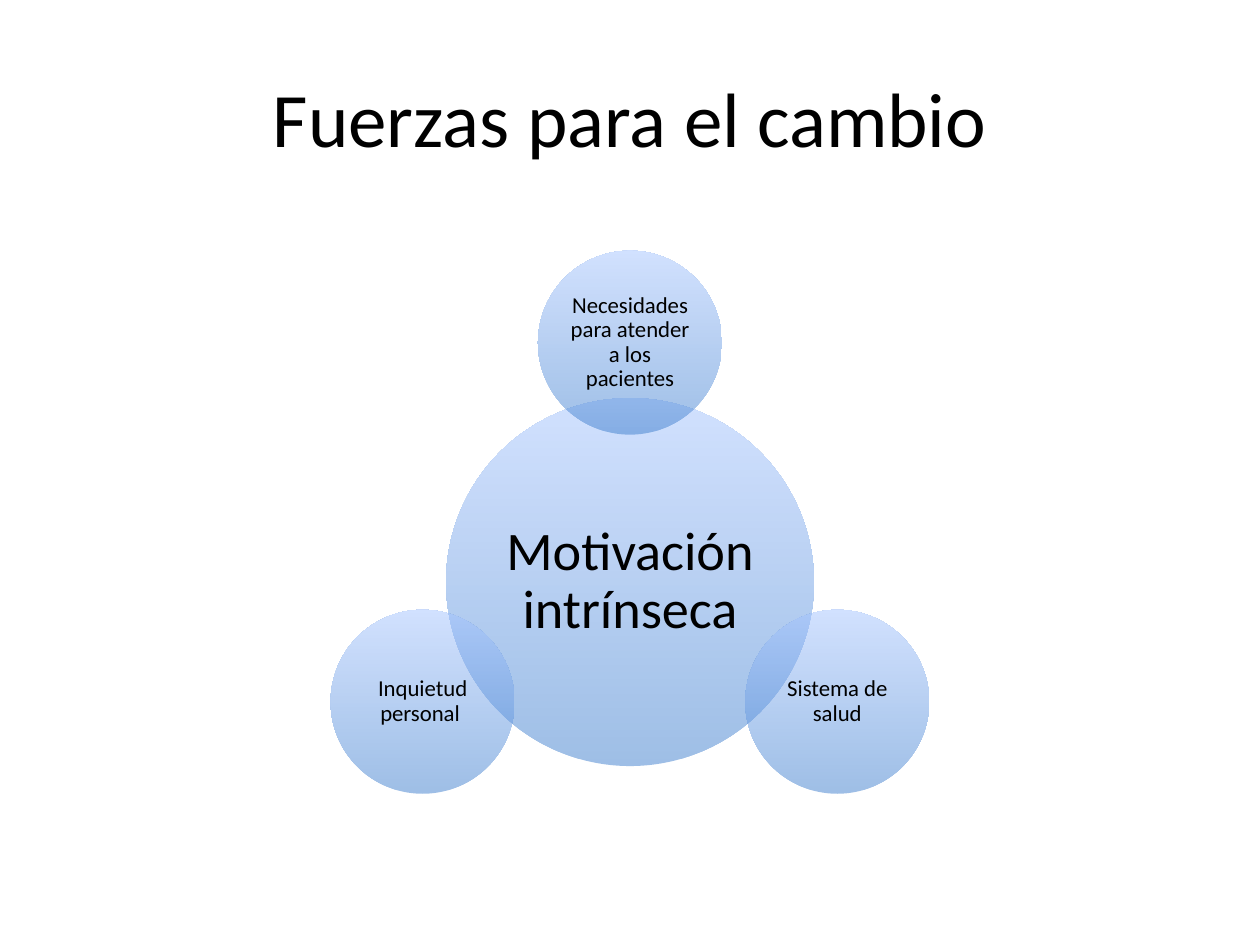
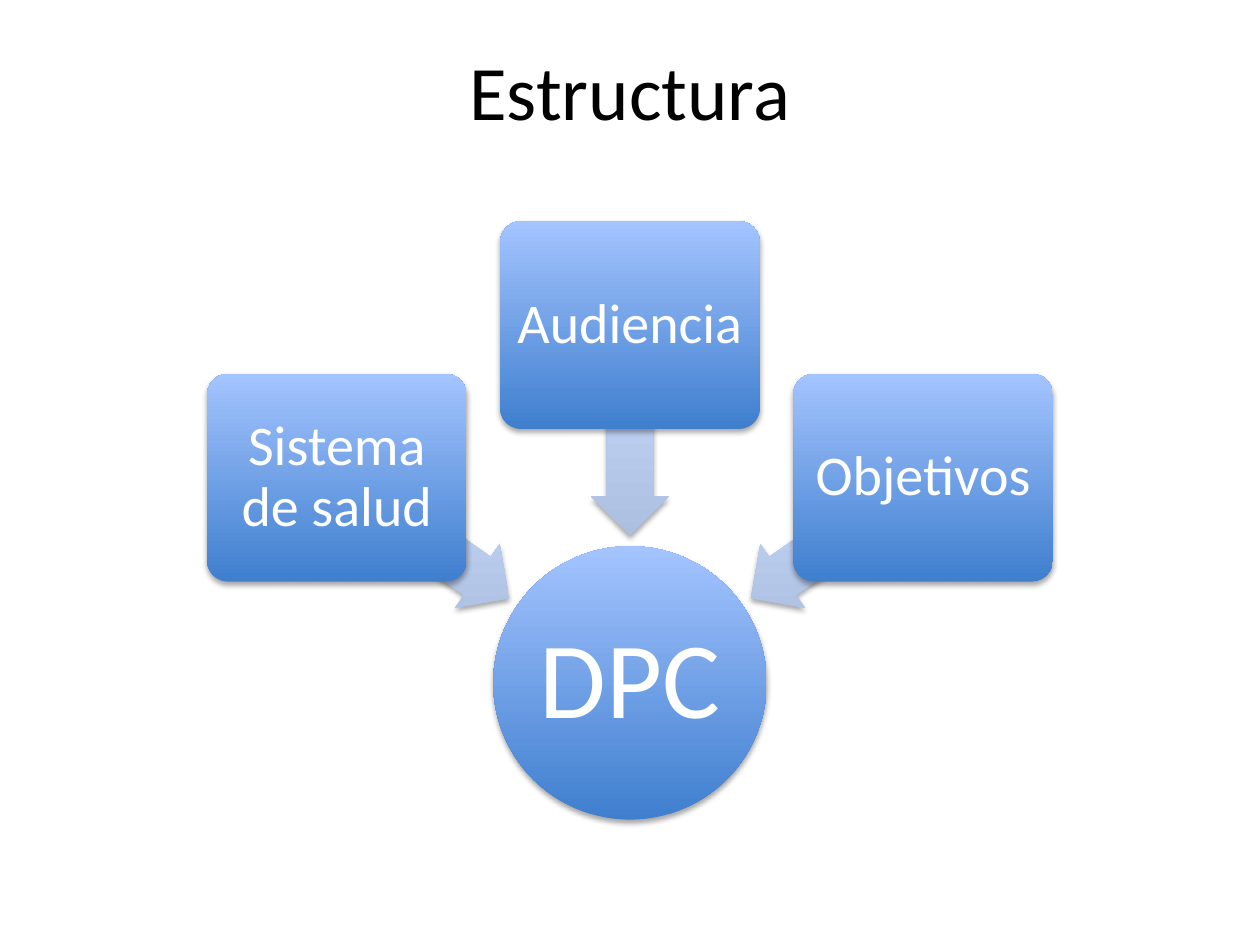
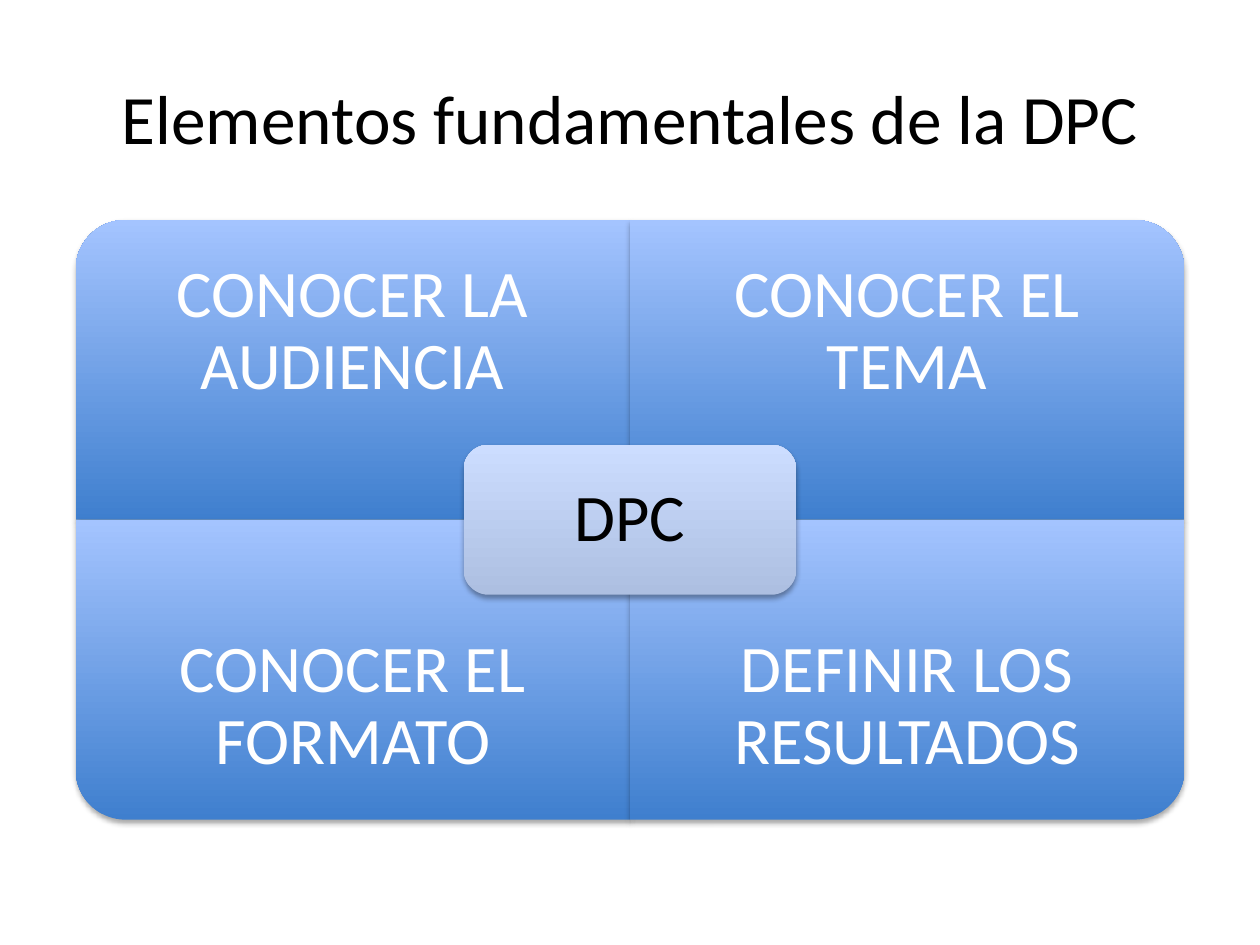
import math

import lxml.etree
import pptx
import pptx.dml.color
import pptx.enum.shapes
import pptx.enum.text
import pptx.oxml.ns
import pptx.util

SHAPES = pptx.enum.shapes.MSO_SHAPE
WIDTH, HEIGHT = 10, 7.5
MIDDLE = WIDTH / 2
FONT = "Calibri"
BLACK, WHITE = "000000", "FFFFFF"
STRONG = ("3F7FCE", "A4C4FF")
PALE = ("ADBFE1", "CCDDFF")
ELLIPSE_INSET = (1 - math.sqrt(0.5)) / 2


def color(hex_string):
    return pptx.dml.color.RGBColor.from_string(hex_string)


def add_child(parent, tag, **attributes):
    child = lxml.etree.SubElement(parent, pptx.oxml.ns.qn(tag))
    for name, value in attributes.items():
        child.set(name, str(value))
    return child


def frame(center, size):
    left, top = (middle - length / 2 for middle, length in zip(center, size))
    return [pptx.util.Inches(length) for length in (left, top, *size)]


def on_orbit(center, radius, degrees):
    angle = math.radians(degrees)
    return center[0] + radius * math.cos(angle), center[1] + radius * math.sin(angle)


def format_text(text_frame, size, hex_string):
    text_frame.word_wrap = True
    text_frame.vertical_anchor = pptx.enum.text.MSO_ANCHOR.MIDDLE
    for para in text_frame.paragraphs:
        para.alignment = pptx.enum.text.PP_ALIGN.CENTER
        for span in para.runs:
            span.font.name = FONT
            span.font.size = pptx.util.Pt(size)
            span.font.color.rgb = color(hex_string)


def add_page(deck, title, size=44, center=(MIDDLE, 0.925), area=(9, 1.25)):
    page = deck.slides.add_slide(deck.slide_layouts[5])
    box = page.shapes.title
    box.left, box.top, box.width, box.height = frame(center, area)
    box.text_frame.text = title
    format_text(box.text_frame, size, BLACK)
    return page


def add_shadow(shape):
    effects = shape._element.spPr.find(pptx.oxml.ns.qn("a:effectLst"))
    shadow = add_child(effects, "a:outerShdw", blurRad=40000, dist=23000,
                       dir=5400000, rotWithShape=0)
    shade = add_child(shadow, "a:srgbClr", val=BLACK)
    add_child(shade, "a:alpha", val=35000)


def add_figure(page, kind, center, size, tones=STRONG, rotation=0,
               adjustments=(), opacity=100, shadow=True):
    shape = page.shapes.add_shape(kind, *frame(center, size))
    shape.rotation = rotation
    for index, value in enumerate(adjustments):
        shape.adjustments[index] = value
    shape.line.fill.background()
    shape.fill.gradient()
    shape.fill.gradient_angle = 90
    for stop, tone, position in zip(shape.fill.gradient_stops, tones, (0, 1)):
        stop.color.rgb = color(tone)
        stop.position = position
    gradient = shape._element.spPr.find(pptx.oxml.ns.qn("a:gradFill"))
    gradient.set("rotWithShape", "0")
    if opacity < 100:
        for tone in gradient.iter(pptx.oxml.ns.qn("a:srgbClr")):
            add_child(tone, "a:alpha", val=opacity * 1000)
    shape.shadow.inherit = False
    if shadow:
        add_shadow(shape)


def add_label(page, text, center, area, size, hex_string, margin):
    box = page.shapes.add_textbox(*frame(center, area))
    text_frame = box.text_frame
    text_frame.text = text
    format_text(text_frame, size, hex_string)
    for side in ("left", "top", "right", "bottom"):
        setattr(text_frame, f"margin_{side}", pptx.util.Inches(margin))
    para = text_frame.paragraphs[0]
    para.line_spacing = 0.9
    spacing = add_child(para._p.get_or_add_pPr(), "a:spcAft")
    add_child(spacing, "a:spcPct", val=35000)


def add_circle(page, text, center, diameter, size, hex_string, margin, **style):
    add_figure(page, SHAPES.OVAL, center, (diameter, diameter), **style)
    side = diameter * (1 - 2 * ELLIPSE_INSET)
    add_label(page, text, center, (side, side), size, hex_string, margin)


def add_card(page, text, center, area, size, hex_string, margin, inset, **style):
    add_figure(page, SHAPES.ROUNDED_RECTANGLE, center, area, **style)
    inner = [length - 2 * inset for length in area]
    add_label(page, text, center, inner, size, hex_string, margin)


def build_forces(deck):
    page = add_page(deck, "Fuerzas para el cambio")
    hub, diameter = (MIDDLE, 4.62), 2.92
    glass = {"opacity": 50, "shadow": False}
    add_circle(page, "Motivación intrínseca", hub, diameter, 31, BLACK, 0.04, **glass)
    forces = ("Necesidades para atender a los pacientes",
              "Sistema de salud", "Inquietud personal ")
    for index, force in enumerate(forces):
        center = on_orbit(hub, 1.9, 270 + 120 * index)
        add_circle(page, force, center, diameter / 2, 13, BLACK, 0.02, **glass)


def build_structure(deck):
    page = add_page(deck, "Estructura", center=(MIDDLE, 0.71), area=(8.8, 1.46))
    hub = (MIDDLE, 5.42)
    add_circle(page, "DPC", hub, 2.17, 62, WHITE, 0.04)
    parts = ("Sistema de salud", "Audiencia", "Objetivos")
    for index, part in enumerate(parts):
        degrees = 215 + 55 * index
        add_figure(page, SHAPES.LEFT_ARROW, on_orbit(hub, 2, degrees), (1.66, 0.62),
                   tones=PALE, rotation=degrees, adjustments=(0.6, 0.5))
        add_card(page, part, on_orbit(hub, 2.84, degrees), (2.06, 1.65),
                 32, WHITE, 0.07, 0.05, adjustments=(0.1,))


def build_elements(deck):
    page = add_page(deck, "Elementos fundamentales de la DPC", size=39.6)
    core = (MIDDLE, 0.55 * HEIGHT)
    width, height = 4.4, 2.38
    quadrants = (("CONOCER LA AUDIENCIA", -1, -1, 270),
                 ("CONOCER EL TEMA", 1, -1, 0),
                 ("CONOCER EL FORMATO", -1, 1, 180),
                 ("DEFINIR LOS RESULTADOS", 1, 1, 90))
    for text, column, row, rotation in quadrants:
        x = core[0] + column * width / 2
        size = (width, height) if rotation % 180 == 0 else (height, width)
        add_figure(page, SHAPES.ROUND_1_RECTANGLE, (x, core[1] + row * height / 2),
                   size, rotation=rotation)
        add_label(page, text, (x, core[1] + row * height * 5 / 8),
                  (width, height * 3 / 4), 38, WHITE, 0.3)
    add_card(page, "DPC", core, (width * 0.6, height / 2), 38, BLACK, 0.16, 0.06,
             tones=PALE)


def main():
    deck = pptx.Presentation()
    deck.slide_width = pptx.util.Inches(WIDTH)
    deck.slide_height = pptx.util.Inches(HEIGHT)
    build_forces(deck)
    build_structure(deck)
    build_elements(deck)
    deck.save("out.pptx")


if __name__ == "__main__":
    main()
